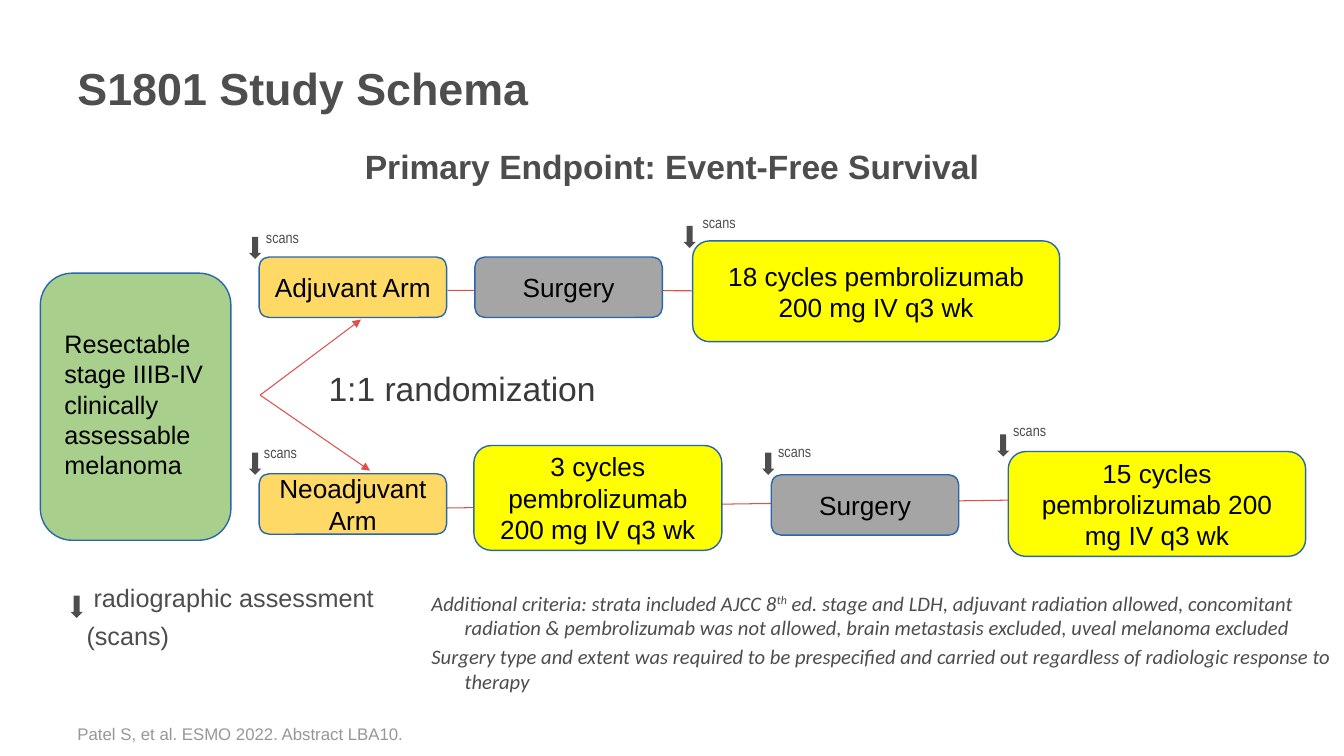
from lxml import etree
from pptx import Presentation, util as u
from pptx.dml.color import RGBColor
from pptx.enum import shapes, text
from pptx.oxml.ns import qn

PX = 9144
INK, RED, BLUE = "4D4D4D", "DF504B", "2867AE"
GREEN, GOLD, GREY, YELLOW = "A8D08C", "FFD966", "A5A5A5", "FFFF00"


def rgb(value):
    return RGBColor.from_string(value)


class Deck:
    """Holds the style and the current slide, and draws each kind of element."""

    formats = {
        "title": {"size": 32, "name": "Arial", "bold": True, "color": "4D4E4D"},
        "heading": {"size": 24, "name": "Arial", "bold": True, "color": INK},
        "split": {"size": 24, "name": "Arial", "color": "3A3A3A"},
        "step": {"size": 18.7, "name": "Arial", "color": "000000"},
        "patients": {"size": 18, "name": "Arial", "color": "000000"},
        "legend": {"size": 18, "name": "Arial", "color": INK},
        "scan": {"size": 11, "name": "Arial Narrow", "color": INK},
        "criteria": {"size": 14.7, "name": "Calibri", "italic": True, "color": INK},
        "source": {"size": 12, "name": "Arial", "color": "979797"},
    }

    def __init__(self, width, height):
        self.prs = Presentation()
        self.prs.slide_width, self.prs.slide_height = width * PX, height * PX
        self.s = self.prs.slides.add_slide(self.prs.slide_layouts[6])

    def style(self, font, style):
        for key, value in self.formats[style].items():
            if key == "color":
                font.color.rgb = rgb(value)
            else:
                setattr(font, key, u.Pt(value) if key == "size" else value)

    def fill_text(self, tf, paragraphs, style, align="LEFT", anchor="TOP", before=0, indents=()):
        tf.word_wrap = True
        tf.vertical_anchor = getattr(text.MSO_ANCHOR, anchor)
        for i, runs in enumerate(paragraphs):
            p = tf.paragraphs[0] if i == 0 else tf.add_paragraph()
            p.alignment = getattr(text.PP_ALIGN, align)
            if i:
                p.space_before = u.Pt(before)
            if i < len(indents):
                left, first = indents[i]
                pPr = p._p.get_or_add_pPr()
                pPr.set("marL", str(left * PX))
                pPr.set("indent", str(first * PX))
            for j, content in enumerate([runs] if isinstance(runs, str) else runs):
                r = p.add_run()
                r.text = content
                self.style(r.font, style)
                if j % 2:
                    r._r.get_or_add_rPr().set("baseline", "30000")

    def label(self, box, paragraphs, style, **layout):
        sp = self.s.shapes.add_textbox(*(v * PX for v in box))
        self.fill_text(sp.text_frame, paragraphs, style, **layout)

    def shape(self, kind, box, fill, line=None):
        sp = self.s.shapes.add_shape(kind, *(v * PX for v in box))
        sp.shadow.inherit = False
        sp.fill.solid()
        sp.fill.fore_color.rgb = rgb(fill)
        if line:
            sp.line.color.rgb = rgb(line)
            sp.line.width = u.Pt(1)
        else:
            sp.line.fill.background()
        return sp

    def step(self, box, fill, content=None):
        sp = self.shape(shapes.MSO_SHAPE.ROUNDED_RECTANGLE, box, fill, BLUE)
        if content:
            self.fill_text(sp.text_frame, [content], "step", align="CENTER", anchor="MIDDLE")

    def marker(self, x, y):
        self.shape(shapes.MSO_SHAPE.DOWN_ARROW, (x, y, 12, 22), INK)

    def link(self, start, end, arrow=False):
        cx = self.s.shapes.add_connector(
            shapes.MSO_CONNECTOR.STRAIGHT, *(v * PX for v in start + end))
        cx.line.color.rgb = rgb(RED)
        cx.line.width = u.Pt(0.75)
        if arrow:
            etree.SubElement(cx.line._get_or_add_ln(), qn("a:tailEnd"), type="triangle")
        etree.SubElement(cx._element.spPr, qn("a:effectLst"))


def main():
    d = Deck(1333, 750)
    d.label((67, 22, 1175, 130), ["S1801 Study Schema"], "title", anchor="MIDDLE")
    d.label((334, 140, 665, 66), ["Primary Endpoint: Event-Free Survival"], "heading",
            align="CENTER")
    d.label((384, 581, 949, 78), [
        ("Additional criteria: strata included AJCC 8", "th",
         " ed. stage and LDH, adjuvant radiation allowed, concomitant radiation & "
         "pembrolizumab was not allowed, brain metastasis excluded, uveal melanoma excluded"),
        "Surgery type and extent was required to be prespecified and carried out "
        "regardless of radiologic response to therapy",
    ], "criteria", before=2.7, indents=[(67, -33)] * 2)

    d.step((40, 271, 189, 265), GREEN)
    d.label((54, 321, 171, 162),
            ["Resectable stage IIIB-IV", "clinically assessable", "melanoma"], "patients")

    fork = (258, 392)
    for tip in ((358, 317), (367, 467)):
        d.link(fork, tip, arrow=True)
    d.link((444, 288), (952, 289))
    d.link((443, 504), (1084, 495))
    d.label((307, 360, 314, 66), ["1:1 randomization"], "split", indents=[(9, 0)])

    for box, fill, content in (
        ((257, 255, 186, 60), GOLD, "Adjuvant Arm"),
        ((257, 470, 186, 60), GOLD, "Neoadjuvant Arm"),
        ((471, 255, 186, 60), GREY, "Surgery"),
        ((765, 471, 186, 60), GREY, "Surgery"),
        ((687, 239, 364, 100), YELLOW, "18 cycles pembrolizumab 200 mg IV q3 wk"),
        ((470, 442, 246, 104), YELLOW, "3 cycles pembrolizumab 200 mg IV q3 wk"),
        ((1000, 448, 295, 104), YELLOW, "15 cycles pembrolizumab 200 mg IV q3 wk"),
    ):
        d.step(box, fill, content)

    for arrow, label in (
        ((247, 235), (254, 221)),
        ((678, 224), (687, 207)),
        ((247, 449), (252, 435)),
        ((756, 449), (762, 434)),
        ((989, 431), (995, 413)),
    ):
        d.marker(*arrow)
        d.label((*label, 66, 30), ["scans"], "scan")

    d.marker(70, 591)
    d.label((76, 573, 308, 76), ["radiographic assessment", "(scans)"], "legend",
            before=5.3, indents=[(7, 0)])
    d.label((67, 695, 1175, 48), ["Patel S, et al. ESMO 2022. Abstract LBA10."], "source",
            anchor="BOTTOM")
    d.prs.save("out.pptx")


if __name__ == "__main__":
    main()
